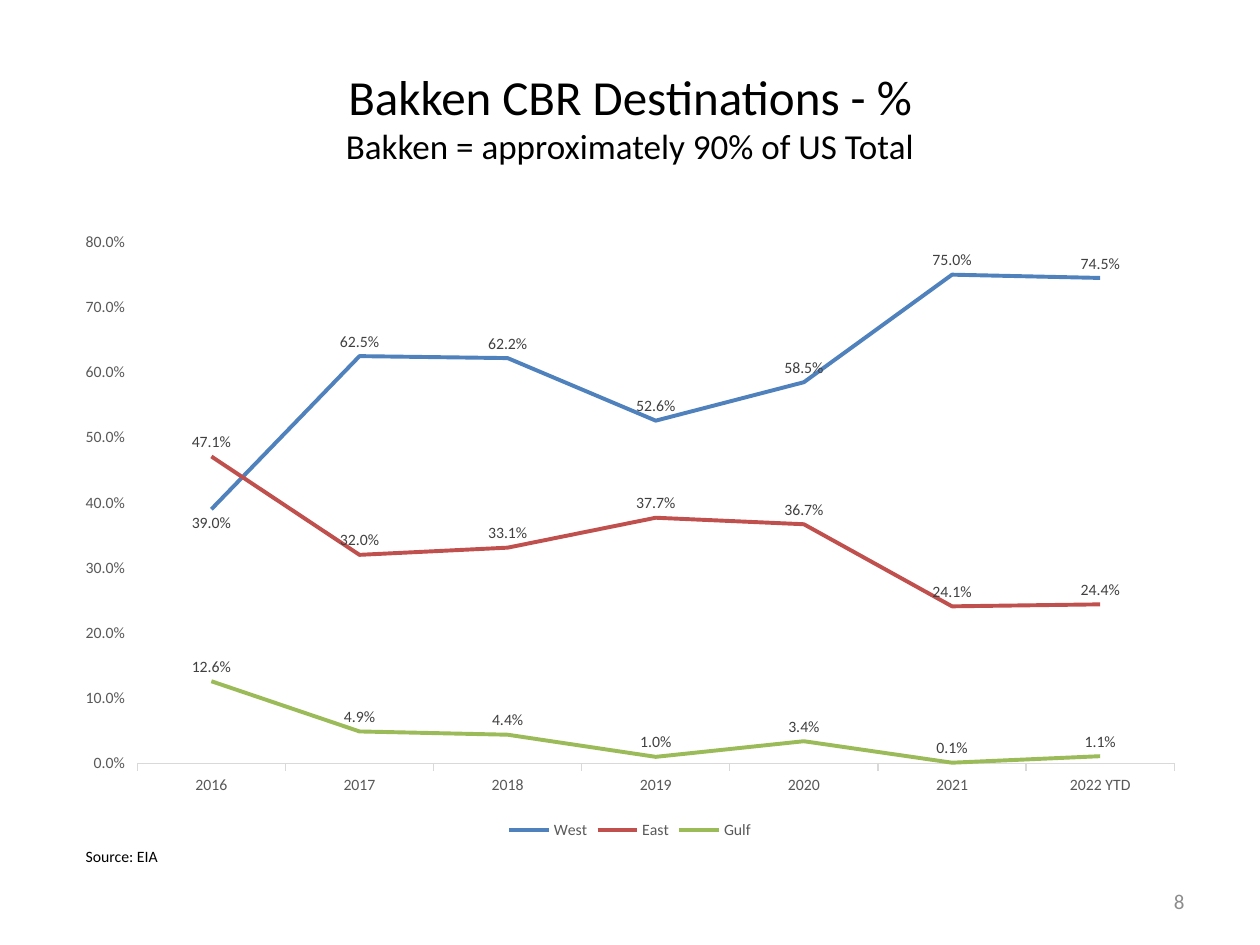
"""Build the slide on Bakken crude-by-rail destinations."""
from dataclasses import dataclass

from pptx import Presentation
from pptx.chart.data import CategoryChartData
from pptx.dml.color import RGBColor
from pptx.enum.chart import XL_CHART_TYPE, XL_LABEL_POSITION, XL_LEGEND_POSITION, XL_TICK_MARK
from pptx.enum.text import MSO_ANCHOR, PP_ALIGN
from pptx.util import Pt

TITLE = "Bakken CBR Destinations - %"
SUBTITLE = "Bakken = approximately 90% of US Total"
SOURCE = "Source: EIA"
PAGE_NUMBER = "8"
YEARS = ["2016", "2017", "2018", "2019", "2020", "2021", "2022 YTD"]
SHARES = {
    "West": (0.39, 0.625, 0.622, 0.526, 0.585, 0.75, 0.745),
    "East": (0.471, 0.32, 0.331, 0.377, 0.367, 0.241, 0.244),
    "Gulf": (0.126, 0.049, 0.044, 0.01, 0.034, 0.001, 0.011),
}
PERCENT = "0.0%"


@dataclass(frozen=True)
class Theme:
    font: str = "Calibri"
    text: str = "000000"
    muted: str = "595959"
    label: str = "404040"
    number: str = "8C8C8C"
    axis: str = "D9D9D9"
    series: tuple = ("4F81BD", "C0504D", "9BBB59")
    title_size: float = 28
    subtitle_size: float = 20
    number_size: float = 12
    chart_size: float = 10
    small_size: float = 9


THEME = Theme()


def style_font(font, size, color):
    font.name, font.size, font.bold = THEME.font, Pt(size), False
    font.color.rgb = RGBColor.from_string(color)


def place_title(page):
    box = page.shapes.title
    box.left, box.top, box.width, box.height = Pt(36), Pt(21.6), Pt(648), Pt(90)
    box.text_frame.vertical_anchor = MSO_ANCHOR.MIDDLE
    para = box.text_frame.paragraphs[0]
    para.alignment = PP_ALIGN.CENTER
    style_font(para.font, THEME.title_size, THEME.text)
    para.add_run().text = TITLE
    para.add_line_break()
    span = para.add_run()
    span.text = SUBTITLE
    span.font.size = Pt(THEME.subtitle_size)


def add_text(page, text, frame, size, color, align, anchor):
    box = page.shapes.add_textbox(*map(Pt, frame))
    box.text_frame.word_wrap = True
    box.text_frame.vertical_anchor = anchor
    para = box.text_frame.paragraphs[0]
    para.text, para.alignment = text, align
    style_font(para.font, size, color)


def style_axes(chart):
    for axis in (chart.category_axis, chart.value_axis):
        axis.has_major_gridlines = False
        axis.major_tick_mark = XL_TICK_MARK.OUTSIDE
        style_font(axis.tick_labels.font, THEME.small_size, THEME.muted)
    line = chart.category_axis.format.line
    line.color.rgb, line.width = RGBColor.from_string(THEME.axis), Pt(0.75)
    values = chart.value_axis
    values.format.line.fill.background()
    values.minimum_scale, values.maximum_scale, values.major_unit = 0, 0.8, 0.1
    values.tick_labels.number_format = PERCENT
    values.tick_labels.number_format_is_linked = False


def style_series(series, color):
    series.smooth = False
    series.format.line.color.rgb = RGBColor.from_string(color)
    series.format.line.width = Pt(2.25)
    labels = series.data_labels
    labels.show_value = True
    labels.position = XL_LABEL_POSITION.ABOVE
    labels.number_format, labels.number_format_is_linked = PERCENT, False
    style_font(labels.font, THEME.small_size, THEME.label)


def add_share_chart(page):
    data = CategoryChartData(number_format=PERCENT)
    data.categories = YEARS
    for name, shares in SHARES.items():
        data.add_series(name, shares)
    chart = page.shapes.add_chart(
        XL_CHART_TYPE.LINE, Pt(36), Pt(126), Pt(648), Pt(356.4), data).chart
    style_font(chart.font, THEME.chart_size, THEME.text)
    chart.has_title = False
    chart.has_legend = True
    chart.legend.position = XL_LEGEND_POSITION.BOTTOM
    chart.legend.include_in_layout = False
    style_font(chart.legend.font, THEME.small_size, THEME.muted)
    chart.plots[0].vary_by_categories = False
    style_axes(chart)
    for series, color in zip(chart.plots[0].series, THEME.series):
        style_series(series, color)
    first_west = chart.plots[0].series[0].points[0].data_label
    style_font(first_west.font, THEME.small_size, THEME.label)
    first_west.position = XL_LABEL_POSITION.BELOW


def main():
    deck = Presentation()
    deck.slide_width, deck.slide_height = Pt(720), Pt(540)
    page = deck.slides.add_slide(deck.slide_layouts[5])
    place_title(page)
    add_text(page, PAGE_NUMBER, (516, 500.4, 168, 28.8), THEME.number_size,
             THEME.number, PP_ALIGN.RIGHT, MSO_ANCHOR.MIDDLE)
    add_share_chart(page)
    add_text(page, SOURCE, (41.8, 480.2, 113.8, 18), THEME.small_size,
             THEME.text, PP_ALIGN.LEFT, MSO_ANCHOR.TOP)
    deck.save("out.pptx")


if __name__ == "__main__":
    main()
